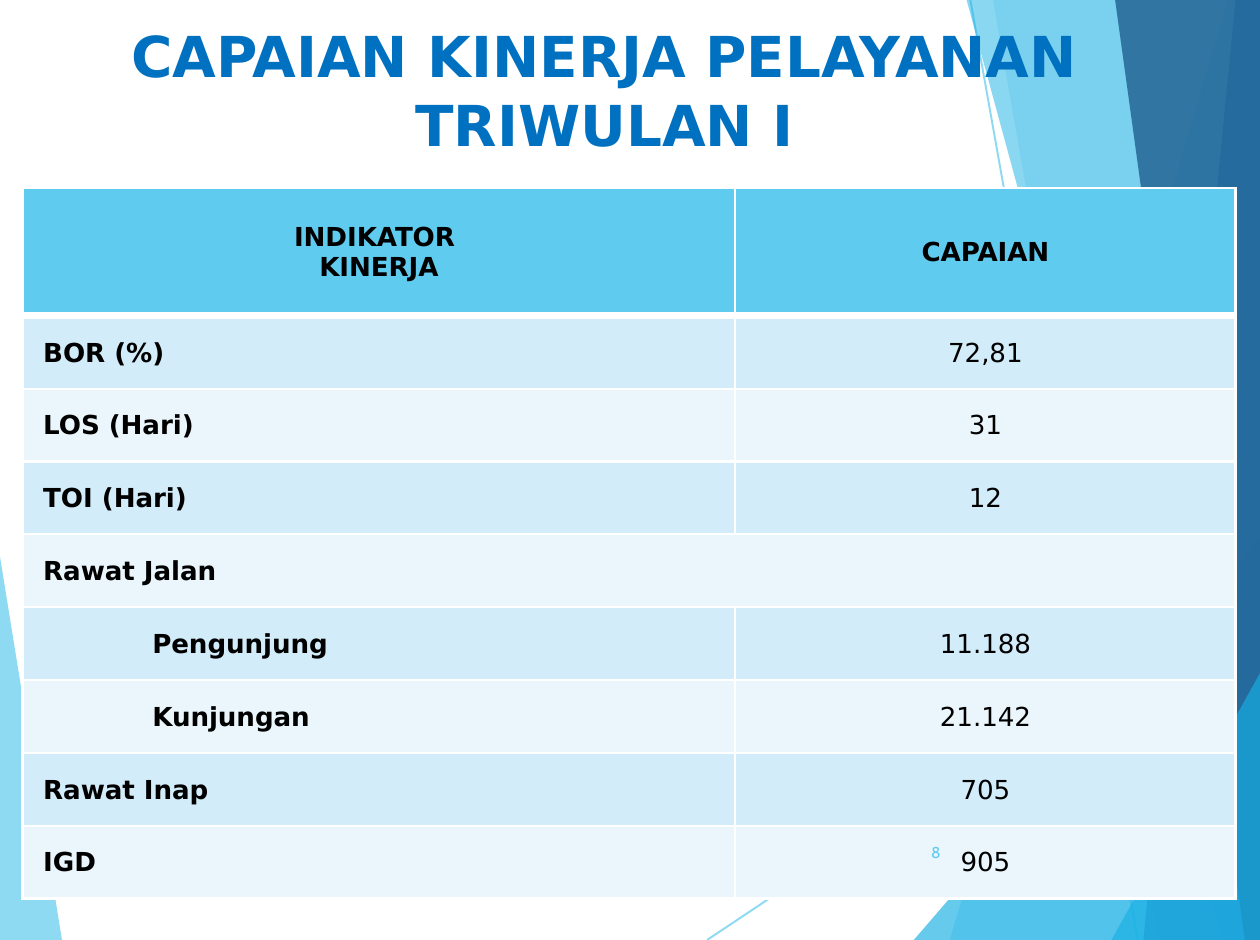
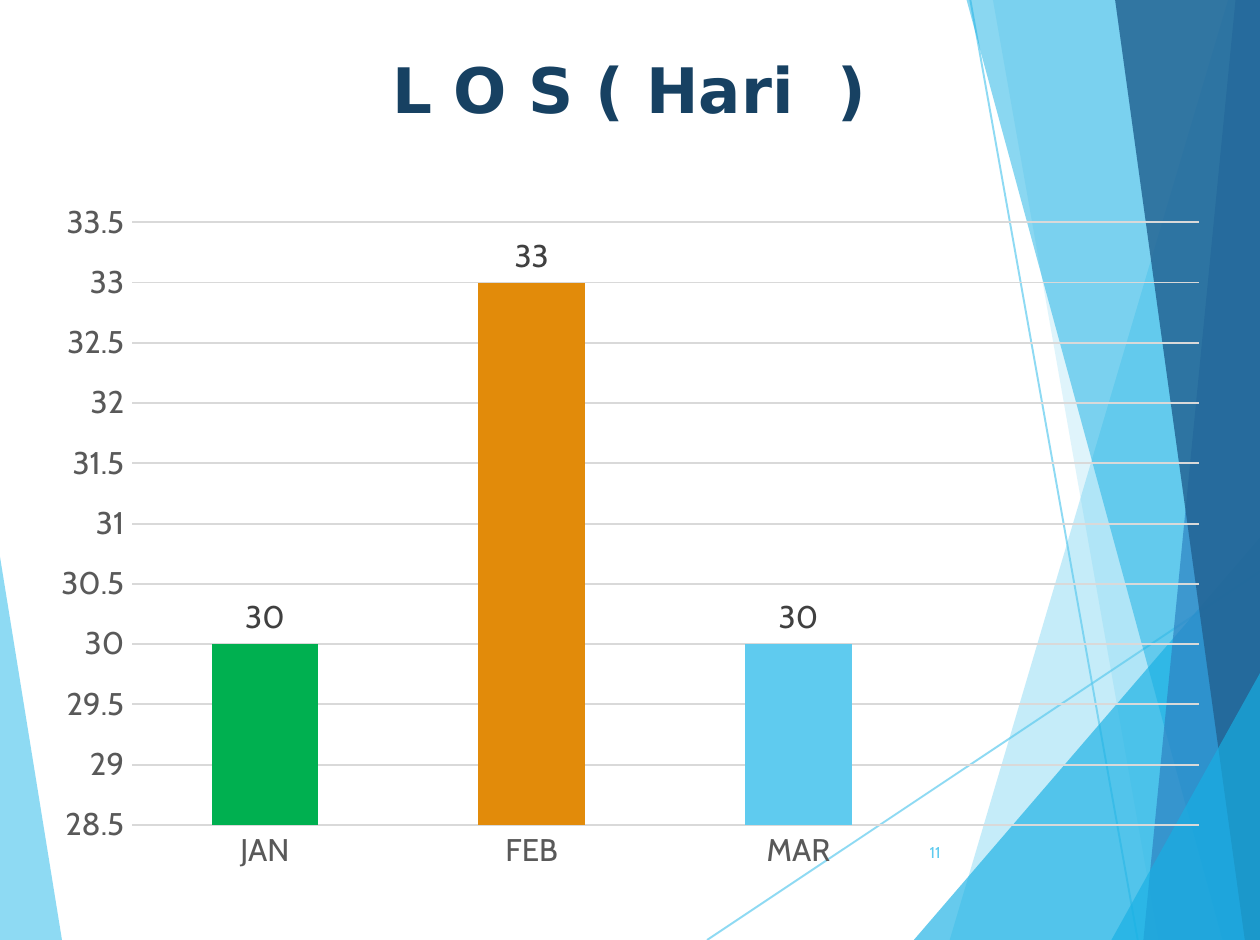
"""Build two hospital performance slides: a quarterly table and a length-of-stay chart."""
from dataclasses import dataclass

from lxml import etree
from pptx import Presentation, util as u
from pptx.chart.data import CategoryChartData
from pptx.dml.color import RGBColor
from pptx.enum import chart as c, shapes, text as t
from pptx.oxml.ns import qn


@dataclass(frozen=True)
class Theme:
    heading_font: str = "DejaVu Sans"
    body_font: str = "Cabin"
    sky: str = "5FCBEF"
    cyan: str = "17B0E4"
    blue: str = "2E83C3"
    navy: str = "226292"
    table_title: str = "0070C0"
    chart_title: str = "174162"
    bands: tuple = ("D2ECF9", "EAF6FC")
    black: str = "000000"
    white: str = "FFFFFF"
    green: str = "00B050"
    orange: str = "E28B0A"
    grid: str = "D9D9D9"
    axis: str = "595959"
    label: str = "404040"
    table_title_size: float = 21.6
    chart_title_size: float = 24
    table_size: float = 10
    chart_size: float = 12
    number_size: float = 6
    hairline: float = 0.75


theme = Theme()
COLUMNS, ROWS = 67, 50
UNIT = u.Inches(0.1)


def grid(*lengths):
    return [u.Emu(round(length * UNIT)) for length in lengths]


def write(frame, text, font=theme.heading_font, size=theme.table_size, color=theme.black,
          bold=False, align=t.PP_ALIGN.CENTER, spacing=1.0):
    frame.word_wrap = True
    frame.text = text
    for paragraph in frame.paragraphs:
        paragraph.alignment = align
        paragraph.line_spacing = spacing
        for run in paragraph.runs:
            run.font.name = font
            run.font.size = u.Pt(size)
            run.font.bold = bold
            run.font.color.rgb = RGBColor.from_string(color)


rays = [((37.6, ROWS), (COLUMNS, 30.4)), ((51.6, 0), (60.5, ROWS))]
bottom_right, top_right = (COLUMNS, ROWS), (COLUMNS, 0)
facets = [
    (theme.sky, 70, [(0, 29.6), (3.3, ROWS), (0, ROWS)]),
    (theme.sky, 36, [(65.3, 0), (50.5, ROWS), bottom_right, top_right]),
    (theme.sky, 20, [(52.8, 0), (61.6, ROWS), bottom_right, top_right]),
    (theme.cyan, 66, [(48.6, ROWS), (COLUMNS, 28.6), bottom_right]),
    (theme.cyan, 50, [(51.4, 0), (65, ROWS), bottom_right, top_right]),
    (theme.blue, 70, [(65.7, 0), (60.8, ROWS), bottom_right, top_right]),
    (theme.navy, 82, [(59.3, 0), (66.2, ROWS), bottom_right, top_right]),
    (theme.cyan, 66, [(59.1, ROWS), (COLUMNS, 35.8), bottom_right]),
]
pages = [
    ("CAPAIAN KINERJA PELAYANAN\vTRIWULAN I", (2, 0.4),
     theme.table_title, theme.table_title_size),
    ("L O S ( Hari  )", (3.3, 2), theme.chart_title, theme.chart_title_size),
]

presentation = Presentation()
presentation.slide_width, presentation.slide_height = grid(COLUMNS, ROWS)
blank = presentation.slide_layouts[6]
slides = []

for title, corner, title_color, title_size in pages:
    slide = presentation.slides.add_slide(blank)
    slides.append(slide)
    translucent = []
    for index, (color, opacity, points) in enumerate(facets):
        corners = [grid(*point) for point in points]
        builder = slide.shapes.build_freeform(*corners[0])
        builder.add_line_segments(corners[1:], close=True)
        facet = builder.convert_to_shape()
        facet.shadow.inherit = False
        facet.fill.solid()
        facet.fill.fore_color.rgb = RGBColor.from_string(color)
        facet.line.fill.background()
        translucent.append((facet, opacity))
        for start, end in rays if index == 0 else []:
            ray = slide.shapes.add_connector(
                shapes.MSO_CONNECTOR.STRAIGHT, *grid(*start, *end))
            ray.line.width = u.Pt(theme.hairline)
            ray.line.color.rgb = RGBColor.from_string(theme.sky)
            etree.SubElement(ray._element.spPr, qn("a:effectLst"))
            translucent.append((ray, 70))
    for shape, opacity in translucent:
        color_element = next(shape._element.spPr.iter(qn("a:srgbClr")))
        etree.SubElement(color_element, qn("a:alpha"), val=str(opacity * 1000))

    title_box = slide.shapes.add_textbox(*grid(*corner, 60.3, 8.3))
    title_box.text_frame.margin_top = u.Inches(0.06)
    write(title_box.text_frame, title, size=title_size, color=title_color,
          bold=True, spacing=1.03)

table_slide, chart_slide = slides

records = [
    ("INDIKATOR \nKINERJA", "CAPAIAN", 0),
    ("BOR (%)", "72,81", 1),
    ("LOS (Hari)", "31", 1),
    ("TOI (Hari)", "12", 1),
    ("Rawat Jalan", None, 1),
    ("Pengunjung", "11.188", 6.8),
    ("Kunjungan", "21.142", 6.8),
    ("Rawat Inap", "705", 1),
    ("IGD", "905", 1),
]
table_height, header_height = 37.8, 6.8
row_height = (table_height - header_height) / (len(records) - 1)
table = table_slide.shapes.add_table(
    len(records), 2, *grid(1.2, 10, 64.5, table_height)).table
for column, width in zip(table.columns, grid(37.9, 26.6)):
    column.width = width
for index, (indicator, value, indent) in enumerate(records):
    header = index == 0
    table.rows[index].height = grid(header_height if header else row_height)[0]
    for position, content in enumerate((indicator, value)):
        cell = table.cell(index, position)
        cell.margin_left = cell.margin_right = cell.margin_top = u.Inches(0.01)
        cell.margin_bottom = 0
        cell.vertical_anchor = t.MSO_ANCHOR.MIDDLE
        properties = cell._tc.get_or_add_tcPr()
        for side in "LRTB":
            thick = (header and side == "B") or (index == 1 and side == "T")
            border = etree.SubElement(
                properties, qn(f"a:ln{side}"), w=str(u.Pt(3 if thick else 1)))
            fill = etree.SubElement(border, qn("a:solidFill"))
            etree.SubElement(fill, qn("a:srgbClr"), val=theme.white)
        cell.fill.solid()
        cell.fill.fore_color.rgb = RGBColor.from_string(
            theme.sky if header else theme.bands[(index - 1) % 2])
        if content is None:
            table.cell(index, 0).merge(cell)
            continue
        named = position == 0 and not header
        if named:
            cell.margin_left += grid(indent)[0]
        write(cell.text_frame, content, bold=header or named,
              align=t.PP_ALIGN.LEFT if named else t.PP_ALIGN.CENTER)

data = CategoryChartData()
data.categories = ["JAN", "FEB", "MAR", ""]
data.add_series("Series 1", (30, 33, 30, None))
chart = chart_slide.shapes.add_chart(
    c.XL_CHART_TYPE.COLUMN_CLUSTERED, *grid(2, 10.1, 63, 36.9), data).chart
chart.has_title = chart.has_legend = False
chart.font.name = theme.body_font
chart.font.size = u.Pt(theme.table_size)
plot = chart.plots[0]
plot.gap_width = 150
plot.vary_by_categories = False
plot.has_data_labels = True
labels = plot.data_labels
labels.show_value = True
labels.position = c.XL_LABEL_POSITION.OUTSIDE_END
fonts = [(labels.font, theme.label)]
for axis in (chart.category_axis, chart.value_axis):
    axis.major_tick_mark = axis.minor_tick_mark = c.XL_TICK_MARK.NONE
    axis.format.line.fill.background()
    fonts.append((axis.tick_labels.font, theme.axis))
for font, color in fonts:
    font.name = theme.body_font
    font.size = u.Pt(theme.chart_size)
    font.color.rgb = RGBColor.from_string(color)
value_axis = chart.value_axis
value_axis.minimum_scale, value_axis.maximum_scale, value_axis.major_unit = 28.5, 33.5, 0.5
gridline = value_axis.major_gridlines.format.line
gridline.width = u.Pt(theme.hairline)
gridline.color.rgb = RGBColor.from_string(theme.grid)
series = plot.series[0]
series.format.fill.solid()
series.format.fill.fore_color.rgb = RGBColor.from_string(theme.sky)
for index, color in enumerate((theme.green, theme.orange)):
    bar = series.points[index].format.fill
    bar.solid()
    bar.fore_color.rgb = RGBColor.from_string(color)

for slide, number in zip(slides, ("8", "11")):
    number_box = slide.shapes.add_textbox(*grid(47.2, 44, 3.8, 2.7))
    number_box.text_frame.vertical_anchor = t.MSO_ANCHOR.MIDDLE
    write(number_box.text_frame, number, font=theme.body_font, size=theme.number_size,
          color=theme.sky, align=t.PP_ALIGN.RIGHT)

presentation.save("out.pptx")
